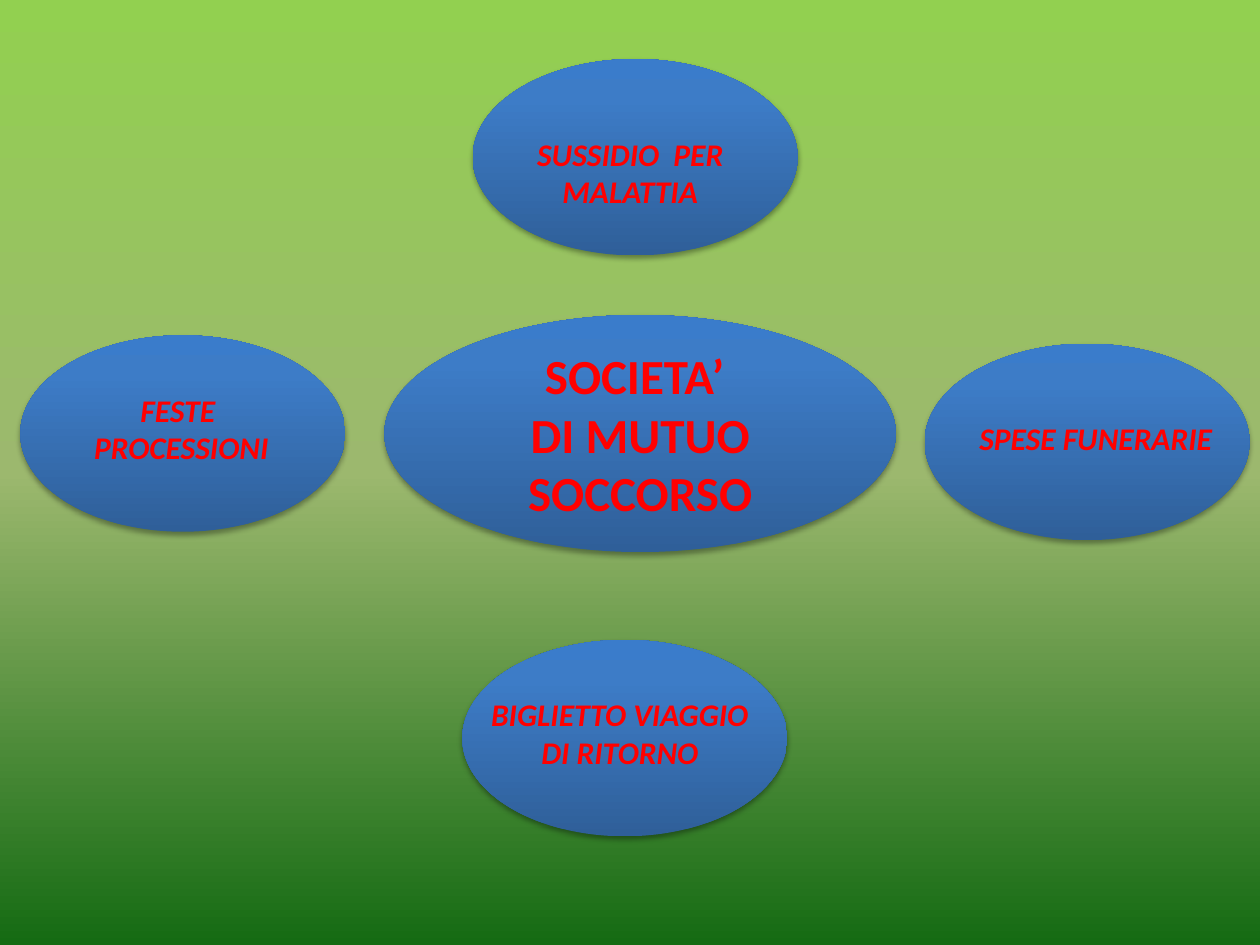
from lxml import etree
from pptx import Presentation
from pptx import util as u
from pptx.dml.color import RGBColor
from pptx.enum import shapes, text
from pptx.oxml.ns import qn

MEADOW = [(0, "92D050"), (50, "9CB86E"), (100, "156B13")]
BLUE = [(0, "2F5F99"), (80, "3D7CC7"), (100, "3A7CCB")]
RED = "FF0000"

# left, top, width, height in cm
HUB = (7.75, 6.35, 10.31, 4.78)
HUB_LINES = ["SOCIETA’ ", "DI MUTUO SOCCORSO"]

BENEFIT_SIZE = (6.55, 3.96)
# oval position, label offset from the oval, label size, wrapped, lines
BENEFITS = [
    ((9.32, 12.9), (0, 0.99), (6.35, 1.8), True, ["BIGLIETTO VIAGGIO DI RITORNO"]),
    ((0.41, 6.76), (0, 0.99), (6.35, 1.8), True, ["FESTE", " PROCESSIONI"]),
    ((18.64, 6.93), (0.82, 1.4), (5.26, 1.02), False, ["SPESE FUNERARIE"]),
    ((9.53, 1.19), (0, 1.4), (6.35, 1.8), True, ["SUSSIDIO  PER MALATTIA"]),
]


def color(value):
    return RGBColor.from_string(value)


def add_color(parent, value):
    return etree.SubElement(parent, qn("a:srgbClr"), val=value)


def set_gradient(fill, owner, stops, angle):
    """Fill with any number of stops; angle runs counter-clockwise."""
    fill.gradient()
    fill.gradient_angle = angle
    stop_list = next(owner.iter(qn("a:gsLst")))
    for old in list(stop_list):
        stop_list.remove(old)
    for percent, value in stops:
        stop = etree.SubElement(stop_list, qn("a:gs"), pos=str(percent * 1000))
        add_color(stop, value)


def add_shadow(shape):
    shape.shadow.inherit = False
    effects = shape._element.spPr.find(qn("a:effectLst"))
    outer = etree.SubElement(
        effects, qn("a:outerShdw"), blurRad=str(u.Pt(3.1)), dist=str(u.Pt(1.8)),
        dir="5400000", rotWithShape="0")
    etree.SubElement(add_color(outer, "000000"), qn("a:alpha"), val="35000")


def add_oval(slide, box):
    oval = slide.shapes.add_shape(shapes.MSO_SHAPE.OVAL, *map(u.Cm, box))
    set_gradient(oval.fill, oval._element.spPr, BLUE, 90)
    oval.line.fill.background()
    add_shadow(oval)
    return oval


def write(frame, lines, size, italic=False, wrap=True):
    frame.word_wrap = wrap
    for number, line in enumerate(lines):
        paragraph = frame.add_paragraph() if number else frame.paragraphs[0]
        paragraph.alignment = text.PP_ALIGN.CENTER
        run = paragraph.add_run()
        run.text = line
        run.font.name = "Calibri"
        run.font.size = u.Pt(size)
        run.font.bold = True
        run.font.italic = italic
        run.font.color.rgb = color(RED)


def main():
    deck = Presentation()
    deck.slide_width, deck.slide_height = u.Cm(25.4), u.Cm(19.05)
    slide = deck.slides.add_slide(deck.slide_layouts[6])
    set_gradient(slide.background.fill, slide._element, MEADOW, 270)

    for position, *_ in BENEFITS:
        add_oval(slide, position + BENEFIT_SIZE)

    hub = add_oval(slide, HUB)
    hub.text_frame.vertical_anchor = text.MSO_ANCHOR.MIDDLE
    write(hub.text_frame, HUB_LINES, 28)

    for (left, top), (dx, dy), size, wrap, lines in BENEFITS:
        box = (left + dx, top + dy) + size
        label = slide.shapes.add_textbox(*map(u.Cm, box))
        label.text_frame.auto_size = text.MSO_AUTO_SIZE.SHAPE_TO_FIT_TEXT
        write(label.text_frame, lines, 18, italic=True, wrap=wrap)

    deck.save("out.pptx")


if __name__ == "__main__":
    main()
